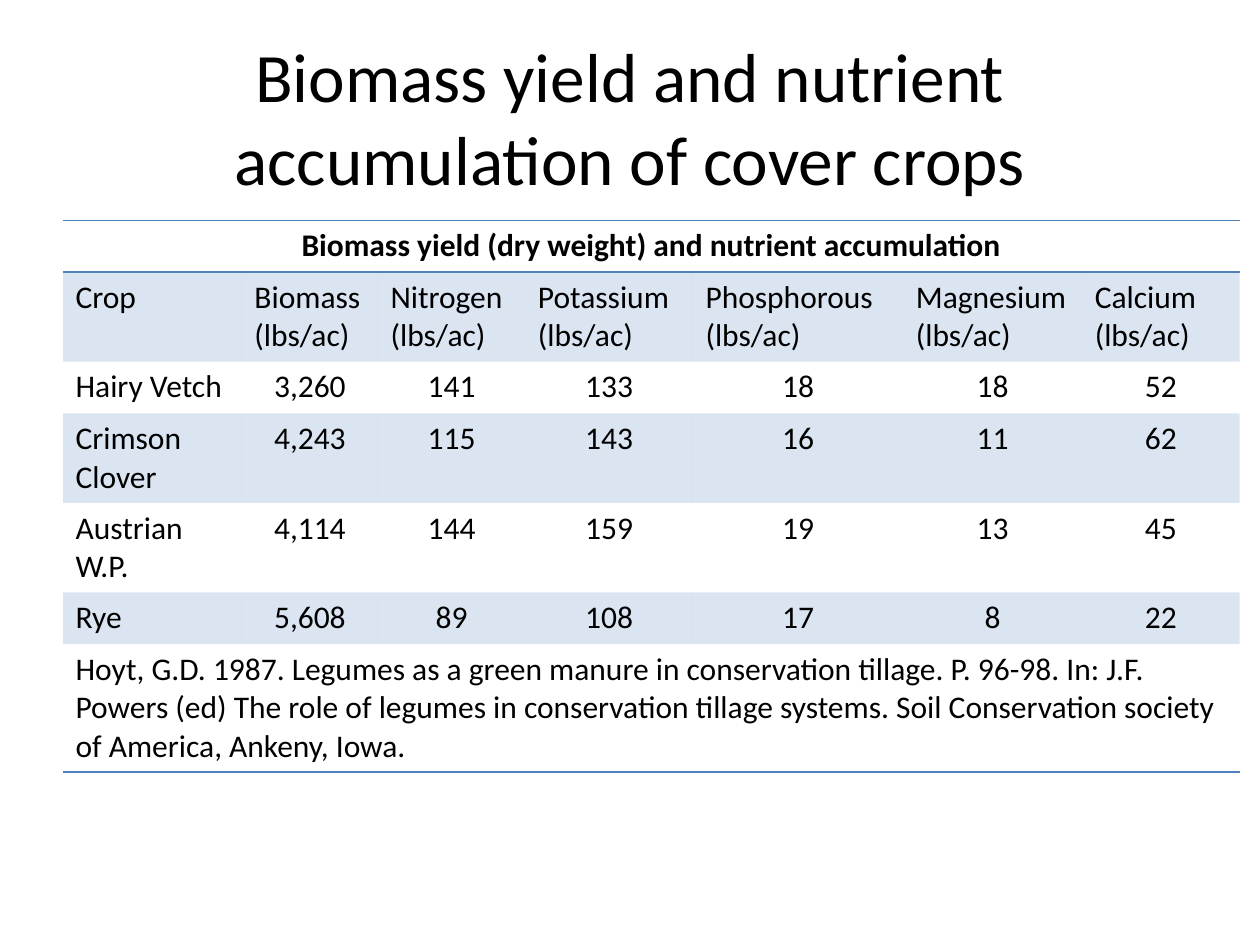
import lxml.etree
import pptx
import pptx.dml.color
import pptx.enum.text
import pptx.oxml.ns
import pptx.util

Inches = pptx.util.Inches
ALIGN = pptx.enum.text.PP_ALIGN

FONT = "Calibri"
BLACK = "000000"
BLUE = "4F81BD"
BAND_OPACITY = 20
PLAIN_TABLE_STYLE = "{2D5ABB26-0587-4C30-8999-92F81FD0307C}"

TITLE = "Biomass yield and nutrient accumulation of cover crops"
CAPTION = "Biomass yield (dry weight) and nutrient accumulation"
SOURCE = (
    "Hoyt, G.D. 1987. Legumes as a green manure in conservation tillage. "
    "P. 96-98. In: J.F. Powers (ed) The role of legumes in conservation tillage "
    "systems. Soil Conservation society of America, Ankeny, Iowa."
)
MEASURES = ["Biomass", "Nitrogen", "Potassium", "Phosphorous", "Magnesium", "Calcium"]
CROPS = [
    ["Hairy Vetch", "3,260", "141", "133", "18", "18", "52"],
    ["Crimson Clover", "4,243", "115", "143", "16", "11", "62"],
    ["Austrian W.P.", "4,114", "144", "159", "19", "13", "45"],
    ["Rye", "5,608", "89", "108", "17", "8", "22"],
]
COLUMN_WIDTHS = [1.42, 1.08, 1.17, 1.33, 1.67, 1.42, 1.25]
ROW_HEIGHT = 0.41


def rgb(color):
    return pptx.dml.color.RGBColor.from_string(color)


def add_element(parent, tag, **attributes):
    return lxml.etree.SubElement(parent, pptx.oxml.ns.qn(tag), attributes)


def write_text(text_frame, text, size=18, bold=False, align=ALIGN.LEFT, color=BLACK):
    paragraph = text_frame.paragraphs[0]
    paragraph.alignment = align
    run = paragraph.add_run()
    run.text = text
    run.font.name = FONT
    run.font.size = pptx.util.Pt(size)
    run.font.bold = bold
    run.font.color.rgb = rgb(color)


def add_title(slide):
    title = slide.shapes.title
    title.left, title.top = Inches(0.5), Inches(0.3)
    title.width, title.height = Inches(9), Inches(1.25)
    frame = title.text_frame
    frame.word_wrap = True
    frame.auto_size = pptx.enum.text.MSO_AUTO_SIZE.NONE
    frame.vertical_anchor = pptx.enum.text.MSO_ANCHOR.MIDDLE
    write_text(frame, TITLE, size=39.6, align=ALIGN.CENTER)


def rule_row(row, *sides):
    """Draw a thin blue border on the given sides, such as a:lnT, of each cell."""
    for cell in row.cells:
        properties = cell._tc.get_or_add_tcPr()
        for side in sides:
            line = add_element(properties, side, w=str(pptx.util.Pt(1)))
            add_element(add_element(line, "a:solidFill"), "a:srgbClr", val=BLUE)


def shade_row(row):
    for cell in row.cells:
        cell.fill.solid()
        cell.fill.fore_color.rgb = rgb(BLUE)
        color = cell._tc.tcPr.find(".//" + pptx.oxml.ns.qn("a:srgbClr"))
        add_element(color, "a:alpha", val=str(BAND_OPACITY * 1000))


def write_spanning_row(table, index, text, **text_format):
    first = table.cell(index, 0)
    first.merge(table.cell(index, len(COLUMN_WIDTHS) - 1))
    write_text(first.text_frame, text, **text_format)


def add_crop_table(slide):
    header = ["Crop"] + [f"{measure} (lbs/ac)" for measure in MEASURES]
    body = [header] + CROPS
    row_count = len(body) + 2
    frame = slide.shapes.add_table(
        row_count, len(COLUMN_WIDTHS), Inches(0.5), Inches(1.75),
        Inches(sum(COLUMN_WIDTHS)), Inches(ROW_HEIGHT * row_count),
    )
    table = frame.table
    table.first_row = table.horz_banding = False
    table._tbl.tblPr.find(pptx.oxml.ns.qn("a:tableStyleId")).text = PLAIN_TABLE_STYLE
    for column, width in zip(table.columns, COLUMN_WIDTHS):
        column.width = Inches(width)
    for row in table.rows:
        row.height = Inches(ROW_HEIGHT)

    write_spanning_row(table, 0, CAPTION, bold=True, align=ALIGN.CENTER)
    for row_index, values in enumerate(body, start=1):
        for column_index, value in enumerate(values):
            is_number = row_index > 1 and column_index > 0
            write_text(table.cell(row_index, column_index).text_frame, value,
                       align=ALIGN.CENTER if is_number else ALIGN.LEFT)
        if row_index % 2:
            shade_row(table.rows[row_index])
    write_spanning_row(table, row_count - 1, SOURCE)

    rule_row(table.rows[0], "a:lnT", "a:lnB")
    rule_row(table.rows[row_count - 1], "a:lnB")


def main():
    presentation = pptx.Presentation()
    presentation.slide_width = Inches(10)
    presentation.slide_height = Inches(7.5)
    slide = presentation.slides.add_slide(presentation.slide_layouts[5])
    add_title(slide)
    add_crop_table(slide)
    presentation.save("out.pptx")


if __name__ == "__main__":
    main()
